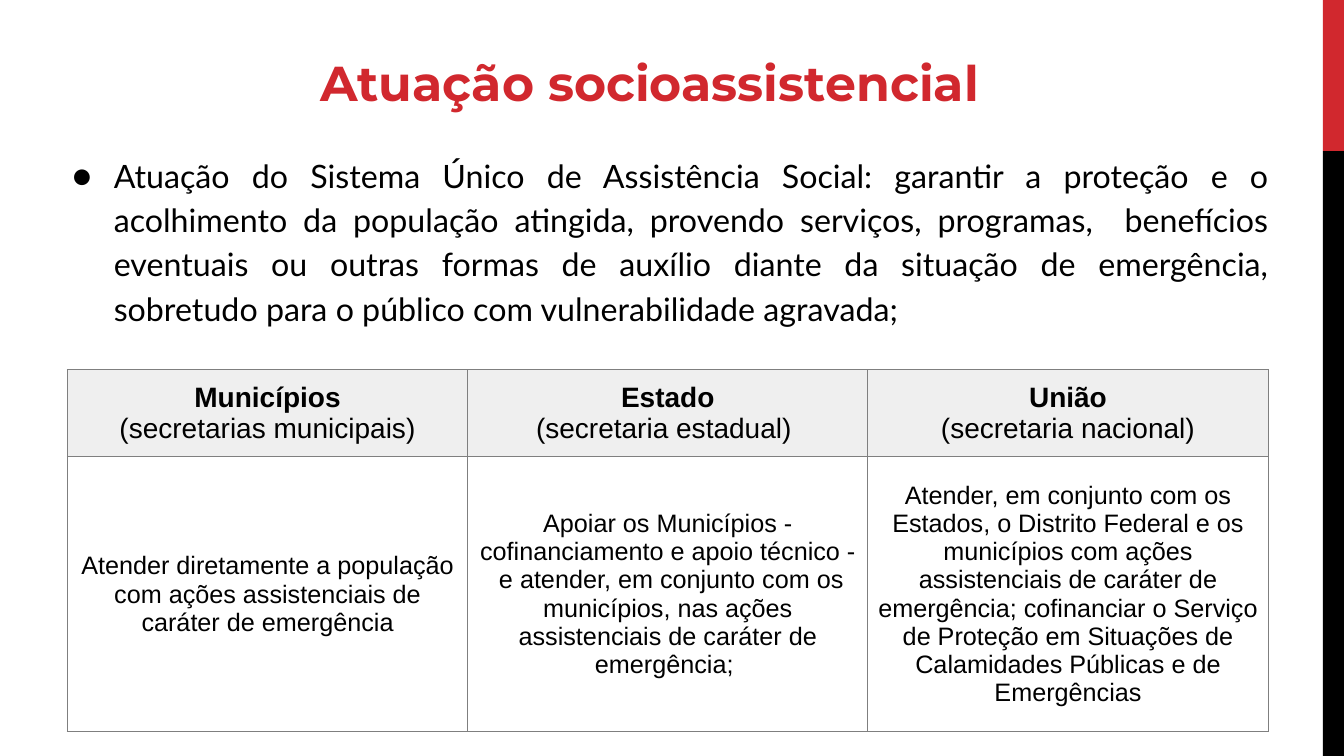
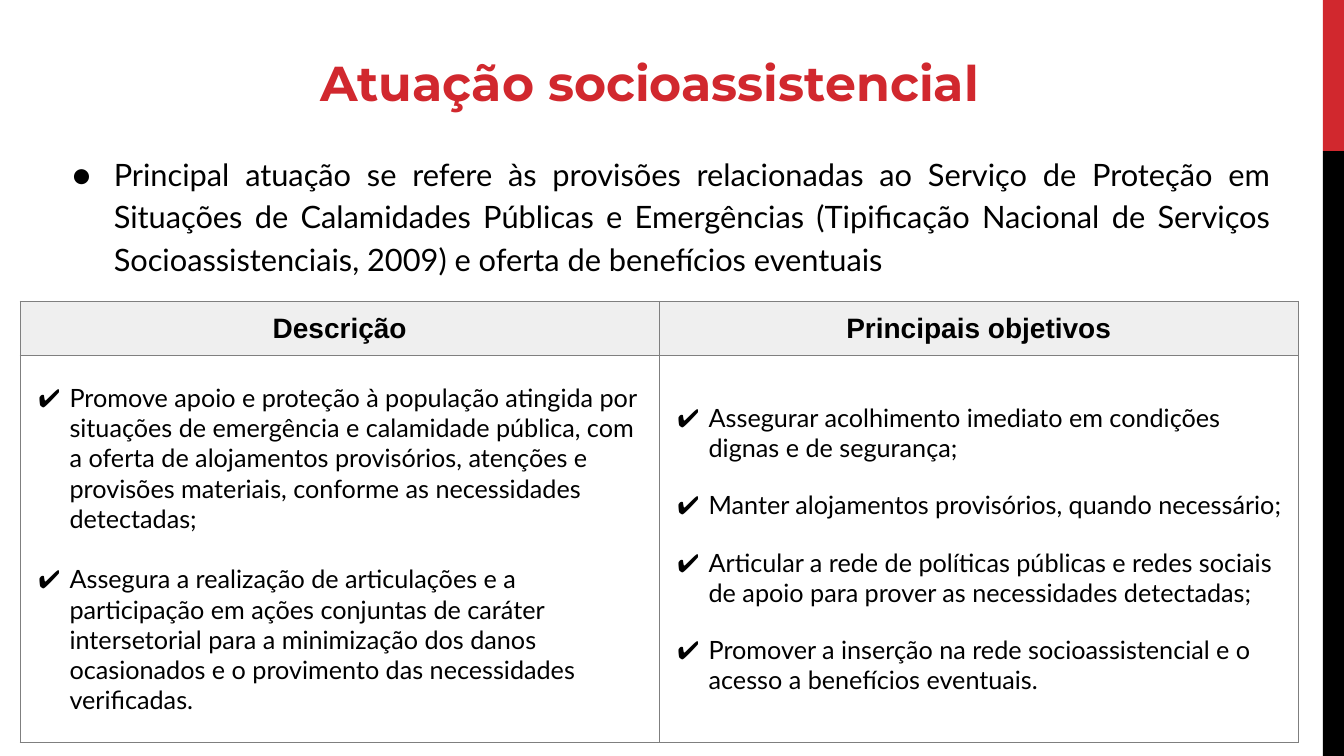
from dataclasses import dataclass

from lxml import etree
from pptx import Presentation
from pptx.dml.color import RGBColor
from pptx.enum import shapes, text
from pptx.oxml import ns
from pptx.util import Pt

RED, BLACK, GRAY, PALE = "D1282E", "000000", "7F7F7F", "EFEFEF"
TITLE_FONT, BODY_FONT, TABLE_FONT = "Montserrat", "Lato", "Arial"
SLIDE_W, SLIDE_H = 960, 540
BAR_X, BAR_SPLIT = 944.9, 108
INSET = 7.2
ALIGN = text.PP_ALIGN


@dataclass(frozen=True)
class Column:
    """A table column: bold heading, optional subtitle and body paragraphs."""

    heading: str
    body: tuple[str, ...]
    subtitle: str = ""
    gap: float = 0


@dataclass(frozen=True)
class Grid:
    """A table's place, sizes and body style."""

    left: float
    top: float
    col_width: float
    row_heights: tuple[float, float]
    columns: tuple[Column, ...]
    checks: bool = False


@dataclass(frozen=True)
class Page:
    """The lead paragraph and table of one slide."""

    lead: str
    lead_size: float
    lead_height: float
    grid: Grid


TITLE = "Atuação socioassistencial "

PAGES = (
    Page(
        "Atuação do Sistema Único de Assistência Social: garantir a proteção e o "
        "acolhimento da população atingida, provendo serviços, programas,  benefícios "
        "eventuais ou outras formas de auxílio diante da situação de emergência, "
        "sobretudo para o público com vulnerabilidade agravada;",
        23, 138.2,
        Grid(48.2, 264.2, 285.9, (62, 196.6), (
            Column("Municípios", (
                "Atender diretamente a população com ações assistenciais de caráter "
                "de emergência",
            ), "(secretarias municipais)"),
            Column("Estado", (
                "Apoiar os Municípios - cofinanciamento e apoio técnico -",
                " e atender, em conjunto com os municípios, nas ações assistenciais "
                "de caráter de emergência; ",
            ), "(secretaria estadual) "),
            Column("União", (
                "Atender, em conjunto com os Estados, o Distrito Federal e os "
                "municípios com ações assistenciais de caráter de emergência; "
                "cofinanciar o Serviço de Proteção em Situações de Calamidades "
                "Públicas e de Emergências",
            ), "(secretaria nacional)"),
        )),
    ),
    Page(
        "Principal atuação se refere às provisões relacionadas ao Serviço de Proteção "
        "em Situações de Calamidades Públicas e Emergências (Tipificação Nacional de "
        "Serviços Socioassistenciais, 2009) e oferta de benefícios eventuais",
        22, 121,
        Grid(14.4, 215.3, 456.5, (38.5, 276.5), (
            Column("Descrição", (
                "Promove apoio e proteção à população atingida por situações de "
                "emergência e calamidade pública, com a oferta de alojamentos "
                "provisórios, atenções e provisões materiais, conforme as "
                "necessidades detectadas;",
                "Assegura a realização de articulações e a participação em ações "
                "conjuntas de caráter intersetorial para a minimização dos danos "
                "ocasionados e o provimento das necessidades verificadas.",
            ), gap=21.6),
            Column("Principais objetivos", (
                "Assegurar acolhimento imediato em condições dignas e de segurança;",
                "Manter alojamentos provisórios, quando necessário;",
                "Articular a rede de políticas públicas e redes sociais de apoio para "
                "prover as necessidades detectadas;",
                "Promover a inserção na rede socioassistencial e o acesso a "
                "benefícios eventuais.",
            ), gap=19.2),
        ), checks=True),
    ),
)


def rgb(value: str) -> RGBColor:
    """Turn a hex string into a colour."""
    return RGBColor.from_string(value)


def sub(parent, tag: str, **attrs: str):
    """Append a DrawingML child element."""
    return etree.SubElement(parent, ns.qn(tag), attrs)


def write(tf, content: str, *, size: float, font: str, color: str = BLACK,
          bold: bool = False, align=ALIGN.LEFT, bullet: str = "", indent: float = 0,
          hang: float = 0, before: float = 0, spacing: float = 1.0) -> None:
    """Add one formatted paragraph, filling the first one if it is empty."""
    p = tf.paragraphs[0] if not tf.text else tf.add_paragraph()
    p.alignment, p.line_spacing = align, spacing
    p.space_before, p.space_after = Pt(before), Pt(0)
    if bullet:
        pPr = p._p.get_or_add_pPr()
        pPr.set("marL", str(Pt(indent)))
        pPr.set("indent", str(Pt(-hang)))
        sub(sub(pPr, "a:buClr"), "a:srgbClr", val=color)
        sub(pPr, "a:buFont", typeface=font)
        sub(pPr, "a:buChar", char=bullet)
    r = p.add_run()
    r.text = content
    r.font.size, r.font.name, r.font.bold = Pt(size), font, bold
    r.font.color.rgb = rgb(color)


def set_frame(tf) -> None:
    """Give a text frame equal insets, wrapping and top anchoring."""
    tf.margin_left = tf.margin_right = tf.margin_top = tf.margin_bottom = Pt(INSET)
    tf.word_wrap, tf.auto_size = True, text.MSO_AUTO_SIZE.NONE
    tf.vertical_anchor = text.MSO_ANCHOR.TOP


def add_bar(slide, top: float, height: float, color: str) -> None:
    """Draw one part of the band at the right edge."""
    sp = slide.shapes.add_shape(shapes.MSO_SHAPE.RECTANGLE, Pt(BAR_X), Pt(top),
                                Pt(SLIDE_W - BAR_X), Pt(height))
    sp.shadow.inherit = False
    sp.fill.solid()
    sp.fill.fore_color.rgb = rgb(color)
    sp.line.fill.background()


def set_title(slide) -> None:
    """Place and format the title placeholder."""
    sp = slide.shapes.title
    sp.left, sp.top, sp.width, sp.height = Pt(24.5), Pt(30.2), Pt(889.2), Pt(67)
    set_frame(sp.text_frame)
    write(sp.text_frame, TITLE, size=35, font=TITLE_FONT, color=RED, bold=True,
          align=ALIGN.CENTER)


def add_lead(slide, page: Page) -> None:
    """Add the justified lead paragraph."""
    sp = slide.shapes.add_textbox(Pt(38.2), Pt(100.1), Pt(876.2), Pt(page.lead_height))
    set_frame(sp.text_frame)
    write(sp.text_frame, page.lead, size=page.lead_size, font=BODY_FONT,
          align=ALIGN.JUSTIFY, bullet="●", indent=36, hang=29.5, spacing=1.15)


def style_cell(cell, fill: str = "") -> None:
    """Set a cell's borders, insets, anchor and fill."""
    tcPr = cell._tc.get_or_add_tcPr()
    for side in "LRTB":
        ln = sub(tcPr, f"a:ln{side}", w=str(Pt(1)))
        sub(sub(ln, "a:solidFill"), "a:srgbClr", val=GRAY)
    cell.margin_left = cell.margin_right = Pt(INSET)
    cell.margin_top = cell.margin_bottom = Pt(INSET)
    cell.vertical_anchor = text.MSO_ANCHOR.MIDDLE
    if fill:
        cell.fill.solid()
        cell.fill.fore_color.rgb = rgb(fill)
    else:
        cell.fill.background()


def add_grid(slide, grid: Grid) -> None:
    """Add a table with a shaded heading row and one body row."""
    count = len(grid.columns)
    table = slide.shapes.add_table(2, count, Pt(grid.left), Pt(grid.top),
                                   Pt(grid.col_width * count),
                                   Pt(sum(grid.row_heights))).table
    table.first_row = table.horz_banding = False
    for row, height in zip(table.rows, grid.row_heights):
        row.height = Pt(height)
    if grid.checks:
        style = dict(font=BODY_FONT, bullet="✔", indent=28.1, hang=22.3)
    else:
        style = dict(font=TABLE_FONT, align=ALIGN.CENTER)
    for i, column in enumerate(grid.columns):
        table.columns[i].width = Pt(grid.col_width)
        head, body = table.cell(0, i), table.cell(1, i)
        style_cell(head, PALE)
        style_cell(body)
        write(head.text_frame, column.heading, size=20, font=TABLE_FONT, bold=True,
              align=ALIGN.CENTER)
        if column.subtitle:
            write(head.text_frame, column.subtitle, size=20, font=TABLE_FONT,
                  align=ALIGN.CENTER)
        for j, item in enumerate(column.body):
            write(body.text_frame, item, size=18, before=column.gap if j else 0, **style)


def main() -> None:
    """Build and save the presentation."""
    prs = Presentation()
    prs.slide_width, prs.slide_height = Pt(SLIDE_W), Pt(SLIDE_H)
    for page in PAGES:
        slide = prs.slides.add_slide(prs.slide_layouts[5])
        add_bar(slide, 0, BAR_SPLIT, RED)
        add_bar(slide, BAR_SPLIT, SLIDE_H - BAR_SPLIT, BLACK)
        set_title(slide)
        add_lead(slide, page)
        add_grid(slide, page.grid)
    prs.save("out.pptx")


if __name__ == "__main__":
    main()
